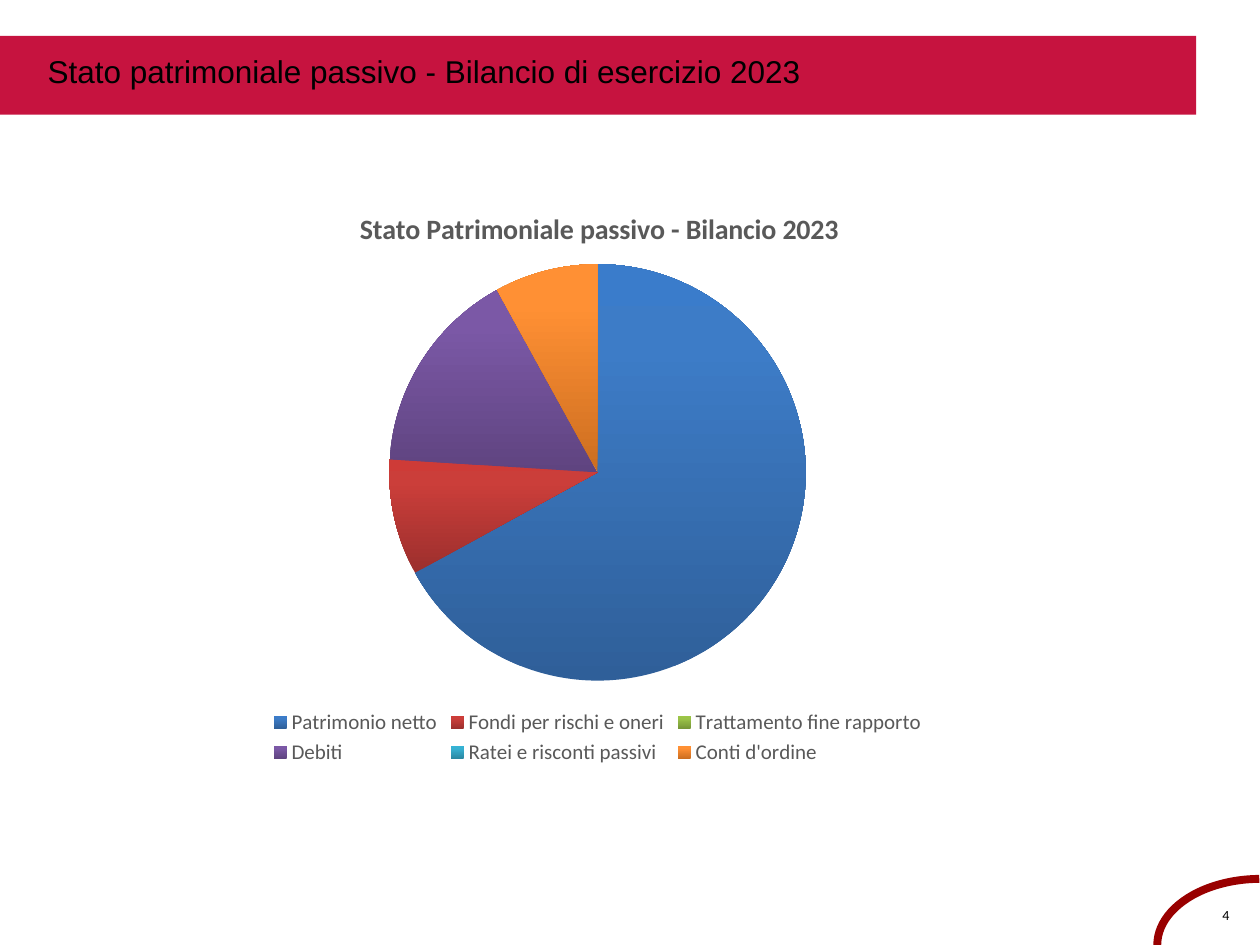
from copy import deepcopy

from pptx import Presentation
from pptx.chart.data import CategoryChartData
from pptx.dml.color import RGBColor
from pptx.enum.chart import XL_CHART_TYPE as ChartType, XL_LEGEND_POSITION as LegendPosition
from pptx.enum.shapes import MSO_SHAPE as Preset
from pptx.enum.text import MSO_ANCHOR as Anchor, MSO_AUTO_SIZE as AutoSize, PP_ALIGN as Align
from pptx.oxml import parse_xml
from pptx.oxml.ns import nsdecls
from pptx.util import Pt

COLORS = {"band": "C6133F", "arc": "990000", "text": "000000", "chart text": "595959"}
LIABILITIES = {
    "Patrimonio netto": (67, ("2F5F99", "3D7CC7", "3A7CCB")),
    "Fondi per rischi e oneri": (9, ("9C2F2D", "CB3E3A", "CE3B37")),
    "Trattamento fine rapporto": (0, ("779737", "9BC348", "9DC746")),
    "Debiti": (16, ("5F4480", "7B58A6", "7C57A8")),
    "Ratei e risconti passivi": (0, ("2A88A2", "37B1D2", "34B4D6")),
    "Conti d'ordine": (8, ("CC6E20", "FF9034", "FF9136")),
}
STOP_POSITIONS = (0, 0.8, 1)


def style_font(font, color, **values):
    font.color.rgb = RGBColor.from_string(COLORS[color])
    for name, value in values.items():
        setattr(font, name, value)


def set_layout(element, **values):
    old = element.find("{*}layout")
    if old is not None:
        element.remove(old)
    parts = "".join(f'<c:{name} val="{value}"/>' for name, value in values.items())
    layout = parse_xml(
        f'<c:layout {nsdecls("c")}><c:manualLayout>{parts}</c:manualLayout></c:layout>')
    text = element.find("{*}tx")
    if text is None:
        element.insert(0, layout)
    else:
        text.addnext(layout)


prs = Presentation()
prs.slide_width, prs.slide_height = Pt(720), Pt(540)
slide = prs.slides.add_slide(prs.slide_layouts[5])
shapes = slide.shapes

corner = shapes.add_shape(Preset.ARC, Pt(682.5), Pt(481), Pt(75.6), Pt(118))
corner.rotation = 270
corner.adjustments[0], corner.adjustments[1] = 162, 215.34
corner.shadow.inherit = False
corner.fill.background()
corner.line.color.rgb = RGBColor.from_string(COLORS["arc"])
corner.line.width = Pt(4.5)

page_number = shapes.add_textbox(Pt(689), Pt(517), Pt(23), Pt(11.5)).text_frame
frame_format = {"word_wrap": True, "margin_left": 0, "margin_top": Pt(2),
                "margin_right": 0, "margin_bottom": 0}
for name, value in frame_format.items():
    setattr(page_number, name, value)
page_number.text = "4"
number_line = page_number.paragraphs[0]
number_line.alignment = Align.CENTER
number_line.line_spacing = 0.93
style_font(number_line.runs[0].font, "text", size=Pt(8), name="Calibri")

band = shapes.add_shape(Preset.RECTANGLE, 0, Pt(20.5), Pt(683.5), Pt(45))
band.shadow.inherit = False
band.fill.solid()
band.fill.fore_color.rgb = RGBColor.from_string(COLORS["band"])
band.line.fill.background()

data = CategoryChartData()
data.categories = list(LIABILITIES)
data.add_series("Series 1", [share for share, _ in LIABILITIES.values()])
chart = shapes.add_chart(
    ChartType.PIE, Pt(26), Pt(100), Pt(631), Pt(340), data).chart
style_font(chart.font, "text", size=Pt(10), name="Calibri")

chart.has_title = True
chart_title = chart.chart_title
chart_title.text_frame.text = "Stato Patrimoniale passivo - Bilancio 2023"
style_font(chart_title.text_frame.paragraphs[0].runs[0].font, "chart text",
           size=Pt(16), name="Calibri", bold=True)
set_layout(chart_title._element, xMode="edge", yMode="edge", x=0.28, y=0.05)

chart.has_legend = True
chart.legend.position = LegendPosition.BOTTOM
chart.legend.include_in_layout = False
style_font(chart.legend.font, "chart text", size=Pt(12), name="Calibri")

pie = chart.plots[0]
pie.vary_by_categories = True
set_layout(pie._element.getparent(), layoutTarget="inner", xMode="edge", yMode="edge",
           x=0.31, y=0.15, w=0.38, h=0.7)
for index, (_, shades) in enumerate(LIABILITIES.values()):
    fill = pie.series[0].points[index].format.fill
    fill.gradient()
    fill.gradient_angle = 90
    last_stop = fill.gradient_stops[1]._gs
    last_stop.addnext(deepcopy(last_stop))
    for stop, position, shade in zip(fill.gradient_stops, STOP_POSITIONS, shades):
        stop.position = position
        stop.color.rgb = RGBColor.from_string(shade)

heading = shapes.title
shapes._spTree.append(heading._element)
heading_box = {"left": Pt(20), "top": Pt(26), "width": Pt(448), "height": Pt(51)}
for name, value in heading_box.items():
    setattr(heading, name, value)
heading.text_frame.text = "Stato patrimoniale passivo - Bilancio di esercizio 2023"
heading.text_frame.vertical_anchor = Anchor.TOP
heading.text_frame.auto_size = AutoSize.NONE
heading_line = heading.text_frame.paragraphs[0]
heading_line.alignment = Align.LEFT
style_font(heading_line.runs[0].font, "text", size=Pt(18), name="Arial")

prs.save("out.pptx")
